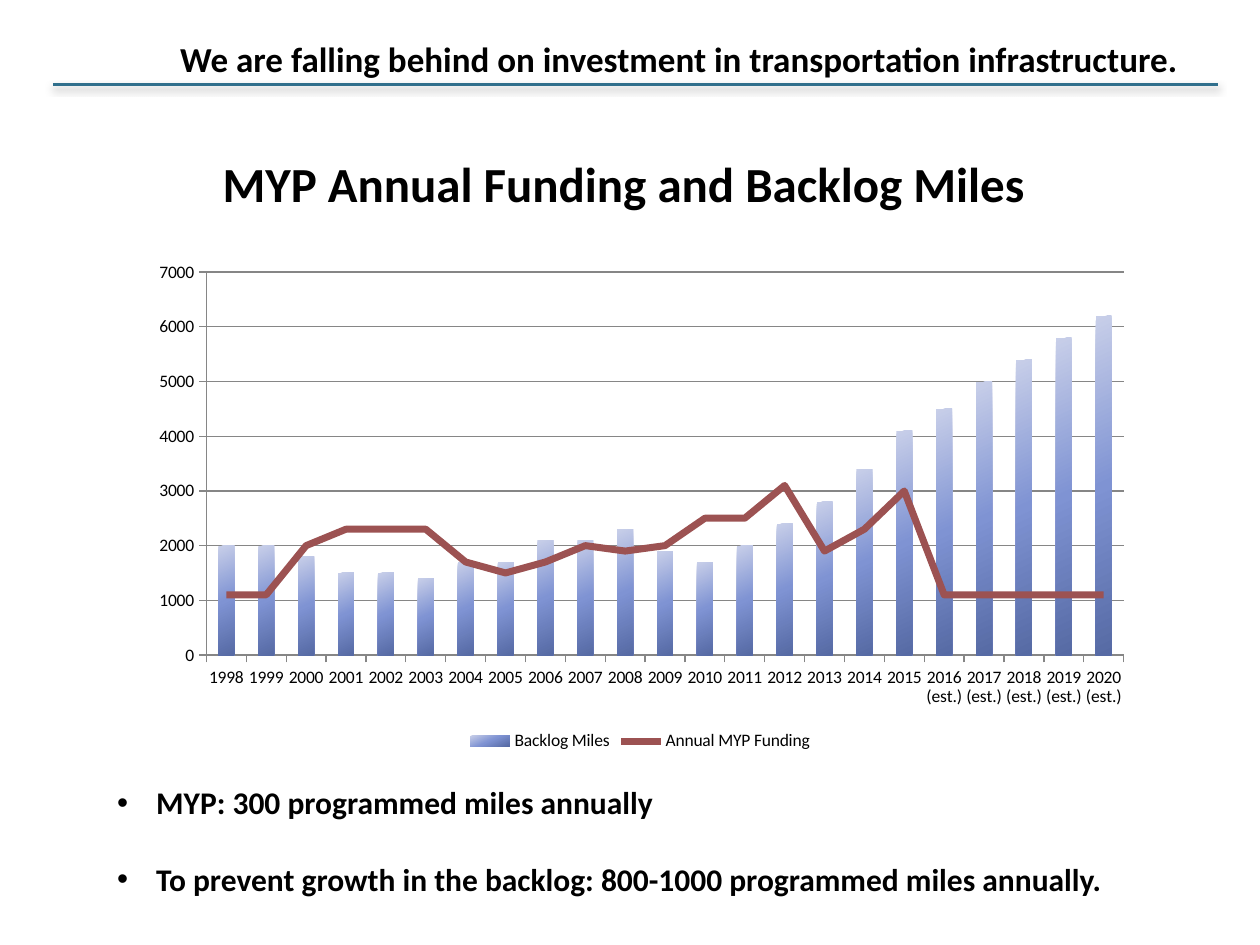
from copy import deepcopy
from dataclasses import dataclass

from lxml.etree import SubElement
from pptx import Presentation
from pptx.chart.data import CategoryChartData as ChartData
from pptx.dml.color import RGBColor as RGB
from pptx.enum.chart import XL_CHART_TYPE as ChartType
from pptx.enum.chart import XL_LEGEND_POSITION as LegendPosition
from pptx.enum.chart import XL_MARKER_STYLE as Marker
from pptx.enum.chart import XL_TICK_MARK as Tick
from pptx.enum.shapes import MSO_CONNECTOR as Connector
from pptx.oxml import parse_xml
from pptx.oxml.ns import nsdecls, qn
from pptx.util import Cm, Pt


@dataclass(frozen=True)
class Theme:
    font: str = "Calibri"
    text: RGB = RGB(0x00, 0x00, 0x00)
    rule: RGB = RGB(0x30, 0x6F, 0x8C)
    axis: RGB = RGB(0x86, 0x86, 0x86)
    bar_stops: tuple = (("C8CFE9", 0), ("7F93D3", 0.5), ("566AA4", 1))
    funding: RGB = RGB(0x9C, 0x52, 0x52)
    title_size: Pt = Pt(28)
    headline_size: Pt = Pt(20)
    bullet_size: Pt = Pt(18)
    chart_size: Pt = Pt(10)


THEME = Theme()

YEARS = [str(year) for year in range(1998, 2016)]
YEARS += [f"{year} (est.)" for year in range(2016, 2021)]
BACKLOG = [2000, 2000, 1800, 1500, 1500, 1400, 1700, 1700, 2100, 2100, 2300, 1900,
           1700, 2000, 2400, 2800, 3400, 4100, 4500, 5000, 5400, 5800, 6200]
FUNDING = [1100, 1100, 2000, 2300, 2300, 2300, 1700, 1500, 1700, 2000, 1900, 2000,
           2500, 2500, 3100, 1900, 2300, 3000] + [1100] * 5
BULLETS = [
    "MYP: 300 programmed miles annually",
    "To prevent growth in the backlog: 800-1000 programmed miles annually.",
]


def add_text(slide, lines, box, size, wrap=True):
    """Add bold, left-aligned text and return its paragraphs."""
    frame = slide.shapes.add_textbox(*map(Cm, box)).text_frame
    frame.word_wrap = wrap
    frame.text = "\n".join(lines)
    for paragraph in frame.paragraphs:
        font = paragraph.runs[0].font
        font.name, font.size, font.bold = THEME.font, size, True
        font.color.rgb = THEME.text
    return frame.paragraphs


def add_bullets(slide, lines, box):
    paragraphs = add_text(slide, lines, box, THEME.bullet_size, wrap=False)
    for paragraph in paragraphs:
        properties = paragraph._p.get_or_add_pPr()
        properties.set("marL", str(Cm(0.79)))
        properties.set("indent", str(-Cm(0.79)))
        SubElement(properties, qn("a:buFont"), typeface="Arial")
        SubElement(properties, qn("a:buChar"), char="•")
    for paragraph in paragraphs[1:]:
        paragraph.space_before = Pt(22)


def add_rule(slide, left, right, top):
    rule = slide.shapes.add_connector(
        Connector.STRAIGHT, Cm(left), Cm(top), Cm(right), Cm(top))
    rule.line.color.rgb = THEME.rule
    rule.line.width = Pt(1.5)
    rule._element.spPr.append(parse_xml(
        f'<a:effectLst {nsdecls("a")}>'
        f'<a:outerShdw blurRad="{Pt(4.1)}" dist="{Pt(2)}" dir="5400000" rotWithShape="0">'
        '<a:srgbClr val="000000"><a:alpha val="40000"/></a:srgbClr>'
        '</a:outerShdw></a:effectLst>'))


def move_last_series_to_line(chart):
    """Turn the last column series into a line on the same axes."""
    columns = chart.plots[0]._element
    series = columns.findall(qn("c:ser"))[-1]
    line_plot = parse_xml(
        f'<c:lineChart {nsdecls("c")}><c:grouping val="standard"/>'
        '<c:varyColors val="0"/><c:marker val="1"/></c:lineChart>')
    for column_setting in series.findall(qn("c:invertIfNegative")):
        series.remove(column_setting)
    line_plot.insert(2, series)
    for axis_id in columns.findall(qn("c:axId")):
        line_plot.append(deepcopy(axis_id))
    columns.addnext(line_plot)


def set_plot_area(chart, x, y, w, h):
    """Place the inner plot area, in fractions of the chart."""
    plot_area = chart._chartSpace.chart.plotArea
    for layout in plot_area.findall(qn("c:layout")):
        plot_area.remove(layout)
    plot_area.insert(0, parse_xml(
        f'<c:layout {nsdecls("c")}><c:manualLayout><c:layoutTarget val="inner"/>'
        '<c:xMode val="edge"/><c:yMode val="edge"/>'
        f'<c:x val="{x}"/><c:y val="{y}"/><c:w val="{w}"/><c:h val="{h}"/>'
        '</c:manualLayout></c:layout>'))


def fill_bars(series):
    fill = series.format.fill
    fill.gradient()
    fill.gradient_angle = 295
    first, last = fill.gradient_stops
    first._gs.addnext(deepcopy(last._gs))
    for stop, (color, position) in zip(fill.gradient_stops, THEME.bar_stops):
        stop.color.rgb = RGB.from_string(color)
        stop.position = position


def add_funding_chart(slide, box):
    figures = ChartData()
    figures.categories = YEARS
    figures.add_series("Backlog Miles", BACKLOG)
    figures.add_series("Annual MYP Funding", FUNDING)
    chart = slide.shapes.add_chart(
        ChartType.COLUMN_CLUSTERED, *map(Cm, box), figures).chart
    chart.font.name, chart.font.size = THEME.font, THEME.chart_size
    chart.font.color.rgb = THEME.text
    chart.has_title = False
    chart.has_legend = True
    chart.legend.position = LegendPosition.BOTTOM
    chart.legend.include_in_layout = False

    # Axes
    for axis in (chart.category_axis, chart.value_axis):
        axis.major_tick_mark = Tick.OUTSIDE
        axis.minor_tick_mark = Tick.NONE
        axis.format.line.color.rgb = THEME.axis
    miles = chart.value_axis
    miles.minimum_scale, miles.maximum_scale, miles.major_unit = 0, 7000, 1000
    miles.has_major_gridlines = True
    miles.major_gridlines.format.line.color.rgb = THEME.axis

    # Columns and line
    move_last_series_to_line(chart)
    columns, line_plot = chart.plots
    columns.vary_by_categories = False
    columns.gap_width = 150
    fill_bars(columns.series[0])
    funding = line_plot.series[0]
    funding.smooth = False
    funding.marker.style = Marker.NONE
    funding.format.line.color.rgb = THEME.funding
    funding.format.line.width = Pt(4)
    set_plot_area(chart, 0.07, 0.04, 0.91, 0.76)


def main():
    deck = Presentation()
    deck.slide_width, deck.slide_height = Cm(25.4), Cm(19.05)
    slide = deck.slides.add_slide(deck.slide_layouts[6])

    # Heading
    add_text(slide, ["MYP Annual Funding and Backlog Miles"],
             (4.24, 2.97, 17.58, 1.9), THEME.title_size)
    add_text(slide, ["We are falling behind on investment in transportation infrastructure."],
             (3.38, 0.64, 21.49, 1.12), THEME.headline_size, wrap=False)
    add_rule(slide, 1.07, 24.56, 1.7)

    # Chart and conclusions
    add_funding_chart(slide, (2.74, 5.08, 20.32, 10.16))
    add_bullets(slide, BULLETS, (2.11, 15.67, 21.21, 3.33))

    deck.save("out.pptx")


if __name__ == "__main__":
    main()
